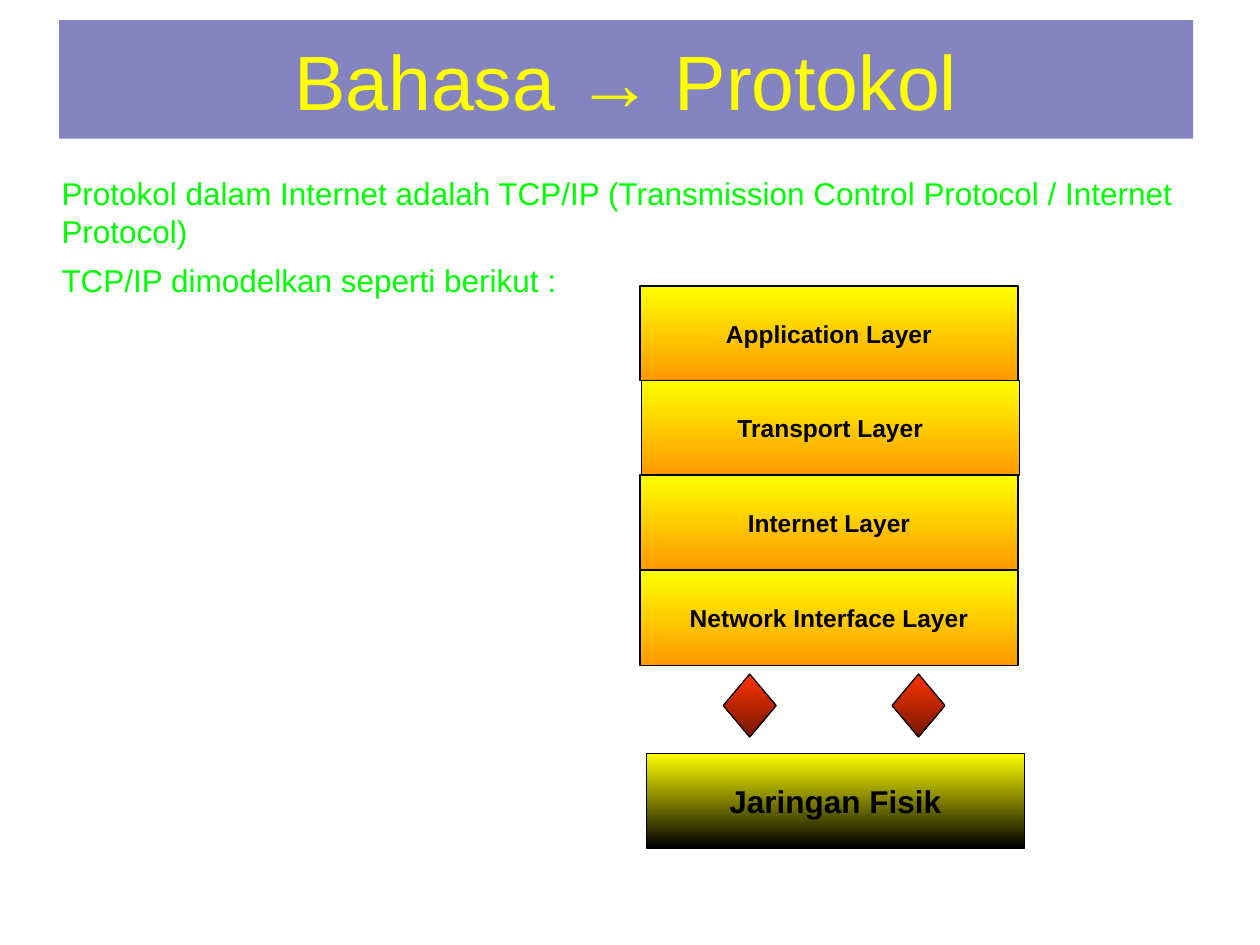
"""Build a slide showing the TCP/IP layers above the physical network."""
from lxml import etree
from pptx import Presentation
from pptx import util as u
from pptx.dml.color import RGBColor
from pptx.enum import shapes, text
from pptx.oxml.ns import qn

COLORS = {
    "title": "FFFF00", "banner": "333399", "body": "00FF00", "ink": "000000",
    "yellow": "FFFF00", "orange": "FF9900", "red": "FF3300", "maroon": "751700",
}
RECT = shapes.MSO_SHAPE.RECTANGLE
DIAMOND = shapes.MSO_SHAPE.FLOWCHART_DECISION


class Deck:
    def __init__(self, font="Arial"):
        self.font = font
        self.prs = Presentation()
        self.prs.slide_width, self.prs.slide_height = u.Inches(10), u.Inches(7.5)
        self.s = self.prs.slides.add_slide(self.prs.slide_layouts[6])

    def rgb(self, name):
        return RGBColor.from_string(COLORS[name])

    def label(self, sp, words, size, color, bold=False, centered=True, wrap=True):
        tf = sp.text_frame
        tf.word_wrap = wrap
        p = tf.paragraphs[0]
        if centered:
            tf.vertical_anchor = text.MSO_ANCHOR.MIDDLE
            p.alignment = text.PP_ALIGN.CENTER
        r = p.add_run()
        r.text = words
        r.font.name, r.font.size, r.font.bold = self.font, u.Pt(size), bold
        r.font.color.rgb = self.rgb(color)

    def shape(self, kind, box):
        sp = self.s.shapes.add_shape(kind, *map(u.Inches, box))
        sp.shadow.inherit = False
        return sp

    def banner(self, box, words, opacity):
        sp = self.shape(RECT, box)
        sp.fill.solid()
        sp.fill.fore_color.rgb = self.rgb("banner")
        color = next(sp.element.spPr.iter(qn("a:srgbClr")))
        etree.SubElement(color, qn("a:alpha"), val=str(opacity * 1000))
        sp.line.fill.background()
        self.label(sp, words, 44, "title")

    def note(self, box, words):
        sp = self.s.shapes.add_textbox(*map(u.Inches, box))
        self.label(sp, words, 18, "body", centered=False)

    def block(self, kind, box, top, bottom, words=None, size=14):
        sp = self.shape(kind, box)
        sp.fill.gradient()
        sp.fill.gradient_angle = 270
        for stop, name in zip(sp.fill.gradient_stops, (top, bottom)):
            stop.color.rgb = self.rgb(name)
        sp.line.color.rgb = self.rgb("ink")
        sp.line.width = u.Pt(0.75)
        if words:
            self.label(sp, words, size, "ink", bold=True, wrap=False)


def main():
    deck = Deck()
    deck.note((0.39, 1.33, 9.17, 0.7),
              "Protokol dalam Internet adalah TCP/IP "
              "(Transmission Control Protocol / Internet Protocol)")
    deck.note((0.39, 2.02, 4.83, 0.4), "TCP/IP dimodelkan seperti berikut :")
    layers = (
        (5.08, 2.27, "Application Layer"),
        (5.09, 3.02, "Transport Layer"),
        (5.08, 3.77, "Internet Layer"),
        (5.08, 4.53, "Network Interface Layer"),
    )
    for left, top, name in layers:
        deck.block(RECT, (left, top, 3, 0.75), "yellow", "orange", name)
    deck.block(RECT, (5.13, 5.98, 3, 0.75), "yellow", "ink", "Jaringan Fisik", 18)
    for left in (5.74, 7.08):
        deck.block(DIAMOND, (left, 5.35, 0.42, 0.5), "red", "maroon")
    deck.banner((0.47, 0.16, 9, 0.94), "Bahasa → Protokol", 60)
    deck.prs.save("out.pptx")


if __name__ == "__main__":
    main()
